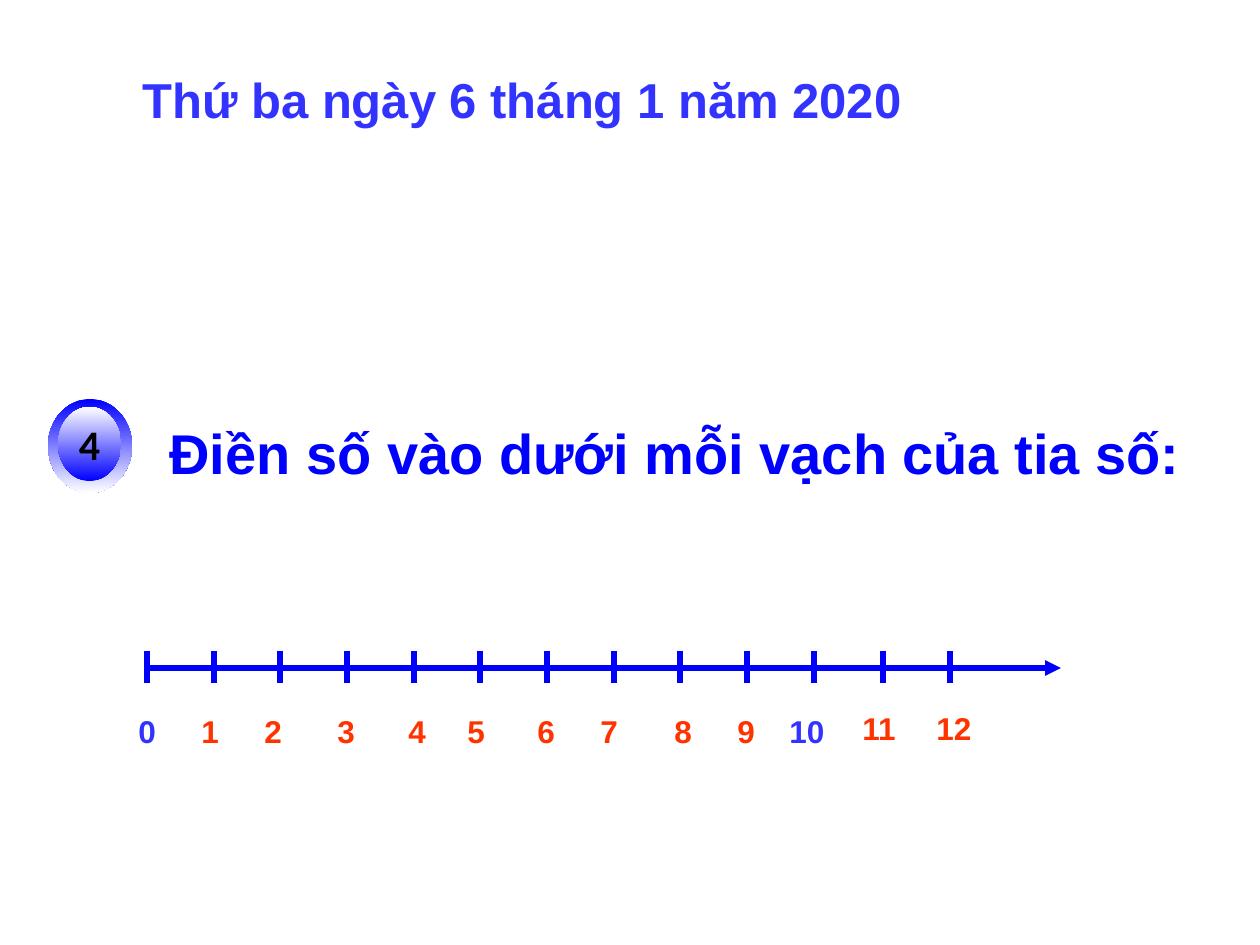
from lxml.etree import SubElement
from pptx import Presentation
from pptx.dml.color import RGBColor
from pptx.enum.shapes import MSO_CONNECTOR, MSO_SHAPE
from pptx.enum.text import MSO_ANCHOR, MSO_AUTO_SIZE, PP_ALIGN
from pptx.oxml.ns import qn
from pptx.util import Pt

EMU_PER_PX = 914400 / 126
COLORS = {
    "axis": "0000FF",
    "given": "3333FF",
    "answer": "FF3300",
    "badge_text": "000000",
    "badge_light": "FFFFFF",
}
LABEL_LEFTS = [126, 189, 252, 325, 396, 455, 525, 588, 662, 725, 777, 850, 924]
GIVEN_NUMBERS = {0, 10}


def px(length):
    return round(length * EMU_PER_PX)


def color(key):
    return RGBColor.from_string(COLORS[key])


def write_text(holder, text, size, color_key, font="Arial", align=PP_ALIGN.LEFT,
               anchor=MSO_ANCHOR.TOP, wrap=True, fit=MSO_AUTO_SIZE.SHAPE_TO_FIT_TEXT):
    frame = holder.text_frame
    frame.word_wrap = wrap
    frame.auto_size = fit
    frame.vertical_anchor = anchor
    paragraph = frame.paragraphs[0]
    paragraph.alignment = align
    run = paragraph.add_run()
    run.text = text
    run.font.name = font
    run.font.size = Pt(size)
    run.font.bold = True
    run.font.color.rgb = color(color_key)


def add_label(slide, text, left, top, width, height, **text_format):
    label = slide.shapes.add_textbox(px(left), px(top), px(width), px(height))
    write_text(label, text, **text_format)


def add_title(slide, text):
    title = slide.shapes.title
    title.left, title.top, title.width, title.height = map(px, (130, 63, 1029, 72))
    write_text(title, text, size=28, color_key="given")


def add_stroke(group, x1, y1, x2, y2, arrow=False):
    stroke = group.shapes.add_connector(
        MSO_CONNECTOR.STRAIGHT, px(x1), px(y1), px(x2), px(y2))
    stroke.line.color.rgb = color("axis")
    stroke.line.width = Pt(3)
    if arrow:
        SubElement(stroke.line._get_or_add_ln(), qn("a:tailEnd"), type="triangle")
    SubElement(stroke._element.spPr, qn("a:effectLst"))


def add_number_line(slide):
    number_line = slide.shapes.add_group_shape()
    add_stroke(number_line, 147, 668, 1061, 668, arrow=True)
    for number, label_left in enumerate(LABEL_LEFTS):
        beyond_ten = number > 10
        tick = 147 + round(number * 200 / 3) + (3 if beyond_ten else 0)
        add_stroke(number_line, tick, 651, tick, 683)
        add_label(slide, str(number), label_left, 703 if beyond_ten else 706,
                  116 if number == 12 else 63, 50, size=18,
                  color_key="given" if number in GIVEN_NUMBERS else "answer")


def add_gradient_oval(group, left, top, width, height):
    oval = group.shapes.add_shape(
        MSO_SHAPE.OVAL, px(left), px(top), px(width), px(height))
    oval.shadow.inherit = False
    oval.line.fill.background()
    oval.fill.gradient()
    oval.fill.gradient_angle = 270
    for stop, key in zip(oval.fill.gradient_stops, ("axis", "badge_light")):
        stop.color.rgb = color(key)
    return oval


def add_badge(slide, text):
    badge = slide.shapes.add_group_shape()
    add_gradient_oval(badge, 48, 399, 84, 94)
    button = add_gradient_oval(badge, 58, 407, 63, 74)
    button.rotation = 180
    write_text(button, text, size=24, color_key="badge_text", font="Calibri",
               align=PP_ALIGN.CENTER, anchor=MSO_ANCHOR.MIDDLE, wrap=False,
               fit=MSO_AUTO_SIZE.NONE)
    button.text_frame._txBody.bodyPr.set("rot", "10800000")


def main():
    presentation = Presentation()
    presentation.slide_width = px(1260)
    presentation.slide_height = px(945)
    slide = presentation.slides.add_slide(presentation.slide_layouts[5])
    add_title(slide, "Thứ ba ngày 6 tháng 1 năm 2020")
    add_badge(slide, "4")
    add_label(slide, "Điền số vào dưới mỗi vạch của tia số:", 157, 412, 1050, 80,
              size=32, color_key="axis")
    add_number_line(slide)
    presentation.save("out.pptx")


if __name__ == "__main__":
    main()
